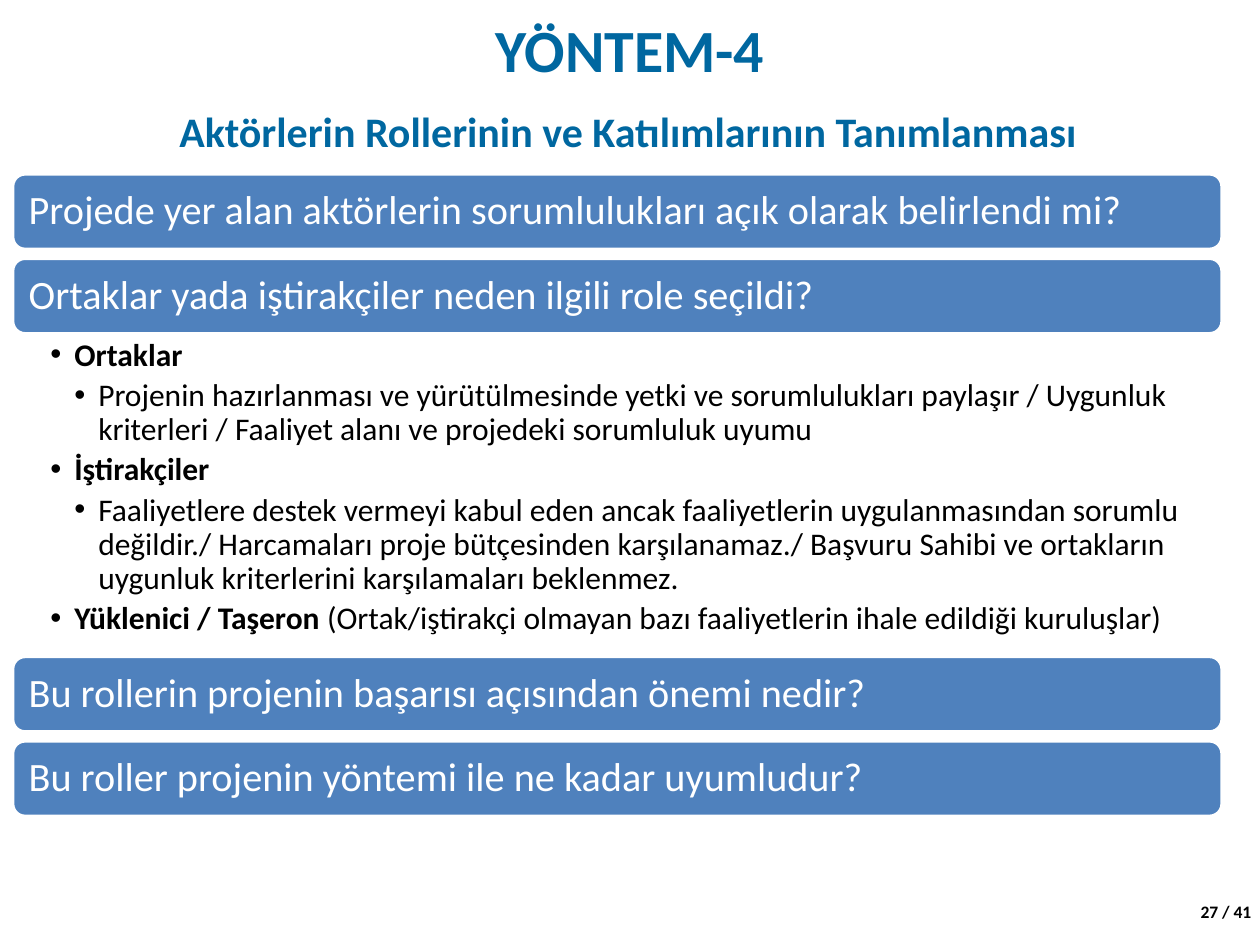
from dataclasses import dataclass

import pptx
import pptx.dml.color
import pptx.enum.shapes
import pptx.enum.text
import pptx.util
from lxml import etree
from pptx.oxml.ns import qn

Inches = pptx.util.Inches
Pt = pptx.util.Pt
RGB = pptx.dml.color.RGBColor.from_string
ANCHOR = pptx.enum.text.MSO_ANCHOR
ALIGN = pptx.enum.text.PP_ALIGN


@dataclass(frozen=True)
class Theme:
    font: str = "Calibri"
    heading: str = "0067A0"
    bar: str = "4F81BD"
    light: str = "FFFFFF"
    dark: str = "000000"
    title_size: float = 34.2
    subtitle_size: float = 24
    bar_size: float = 23
    list_size: float = 18
    number_size: float = 10


THEME = Theme()
BAR_HEIGHT = 0.6
BAR_STEP = 0.67
INDENT = 0.19

TOP_QUESTIONS = [
    "Projede yer alan aktörlerin sorumlulukları açık olarak belirlendi mi?",
    "Ortaklar yada iştirakçiler neden ilgili role seçildi?",
]
BOTTOM_QUESTIONS = [
    "Bu rollerin projenin başarısı açısından önemi nedir?",
    "Bu roller projenin yöntemi ile ne kadar uyumludur?",
]
# Each item: level, then runs of (text, bold)
ROLES = [
    (0, [("Ortaklar", True)]),
    (1, [("Projenin hazırlanması ve yürütülmesinde yetki ve sorumlulukları "
          "paylaşır / Uygunluk kriterleri / Faaliyet alanı ve projedeki "
          "sorumluluk uyumu", False)]),
    (0, [("İştirakçiler", True)]),
    (1, [("Faaliyetlere destek vermeyi kabul eden ancak faaliyetlerin "
          "uygulanmasından sorumlu değildir./ Harcamaları proje bütçesinden "
          "karşılanamaz./ Başvuru Sahibi ve ortakların uygunluk kriterlerini "
          "karşılamaları beklenmez.", False)]),
    (0, [("Yüklenici / Taşeron ", True),
         ("(Ortak/iştirakçi olmayan bazı faaliyetlerin ihale edildiği "
          "kuruluşlar)", False)]),
]


def place(sp, box):
    sp.left, sp.top, sp.width, sp.height = (Inches(v) for v in box)


def set_frame(tf, anchor, insets=(0.1, 0.05, 0.1, 0.05)):
    tf.word_wrap = True
    tf.auto_size = pptx.enum.text.MSO_AUTO_SIZE.NONE
    tf.vertical_anchor = anchor
    (tf.margin_left, tf.margin_top,
     tf.margin_right, tf.margin_bottom) = (Inches(v) for v in insets)


def add_run(p, text, size, color, bold=False):
    r = p.add_run()
    r.text = text
    r.font.name = THEME.font
    r.font.size = Pt(size)
    r.font.bold = bold
    r.font.color.rgb = RGB(color)


def add_heading(sp, box, text, size):
    place(sp, box)
    tf = sp.text_frame
    set_frame(tf, ANCHOR.MIDDLE)
    p = tf.paragraphs[0]
    p.alignment = ALIGN.CENTER
    add_run(p, text, size, THEME.heading, bold=True)


def add_bars(slide, box, questions):
    """Stack one rounded bar per question, downwards from the top of the box."""
    left, top, width = box
    for i, question in enumerate(questions):
        sp = slide.shapes.add_shape(
            pptx.enum.shapes.MSO_SHAPE.ROUNDED_RECTANGLE, Inches(left),
            Inches(top + i * BAR_STEP), Inches(width), Inches(BAR_HEIGHT))
        sp.shadow.inherit = False
        sp.fill.solid()
        sp.fill.fore_color.rgb = RGB(THEME.bar)
        sp.line.color.rgb = RGB(THEME.light)
        sp.line.width = Pt(2)
        tf = sp.text_frame
        set_frame(tf, ANCHOR.MIDDLE, (0.1, 0.1, 0.1, 0.1))
        p = tf.paragraphs[0]
        p.alignment = ALIGN.LEFT
        p.line_spacing = 0.9
        add_run(p, question, THEME.bar_size, THEME.light)


def set_bullet(p, level):
    p.level = level
    pPr = p._p.get_or_add_pPr()
    pPr.set("marL", str(Inches(INDENT * (level + 1))))
    pPr.set("indent", str(-Inches(INDENT)))
    etree.SubElement(pPr, qn("a:buFont")).set("typeface", "Arial")
    etree.SubElement(pPr, qn("a:buChar")).set("char", "•")


def add_role_list(sp, box, items):
    place(sp, box)
    tf = sp.text_frame
    set_frame(tf, ANCHOR.TOP, (0.3, 0.03, 0.18, 0.03))
    for i, (level, runs) in enumerate(items):
        p = tf.add_paragraph() if i else tf.paragraphs[0]
        p.alignment = ALIGN.LEFT
        p.line_spacing = 0.9
        p.space_before = Pt(0)
        p.space_after = Pt(0.2 * THEME.list_size)
        set_bullet(p, level)
        for text, bold in runs:
            add_run(p, text, THEME.list_size, THEME.dark, bold)


def add_page_number(slide, box, text):
    sp = slide.shapes.add_textbox(*(Inches(v) for v in box))
    set_frame(sp.text_frame, ANCHOR.TOP)
    add_run(sp.text_frame.paragraphs[0], text, THEME.number_size, THEME.dark,
            bold=True)


def main():
    prs = pptx.Presentation()
    prs.slide_width, prs.slide_height = Inches(10), Inches(7.5)
    slide = prs.slides.add_slide(prs.slide_layouts[1])

    add_heading(slide.shapes.title, (0.5, 0.07, 9, 0.63), "YÖNTEM-4",
                THEME.title_size)
    subtitle = slide.shapes.add_textbox(0, 0, 0, 0)
    add_heading(subtitle, (0.04, 0.72, 9.89, 0.63),
                "Aktörlerin Rollerinin ve Katılımlarının Tanımlanması",
                THEME.subtitle_size)
    add_bars(slide, (0.1, 1.38, 9.6), TOP_QUESTIONS)
    add_role_list(slide.placeholders[1], (0.1, 2.66, 9.6, 2.55), ROLES)
    add_bars(slide, (0.1, 5.21, 9.6), BOTTOM_QUESTIONS)
    add_page_number(slide, (9.43, 7.1, 0.68, 0.3), "27 / 41")

    prs.save("out.pptx")


if __name__ == "__main__":
    main()
